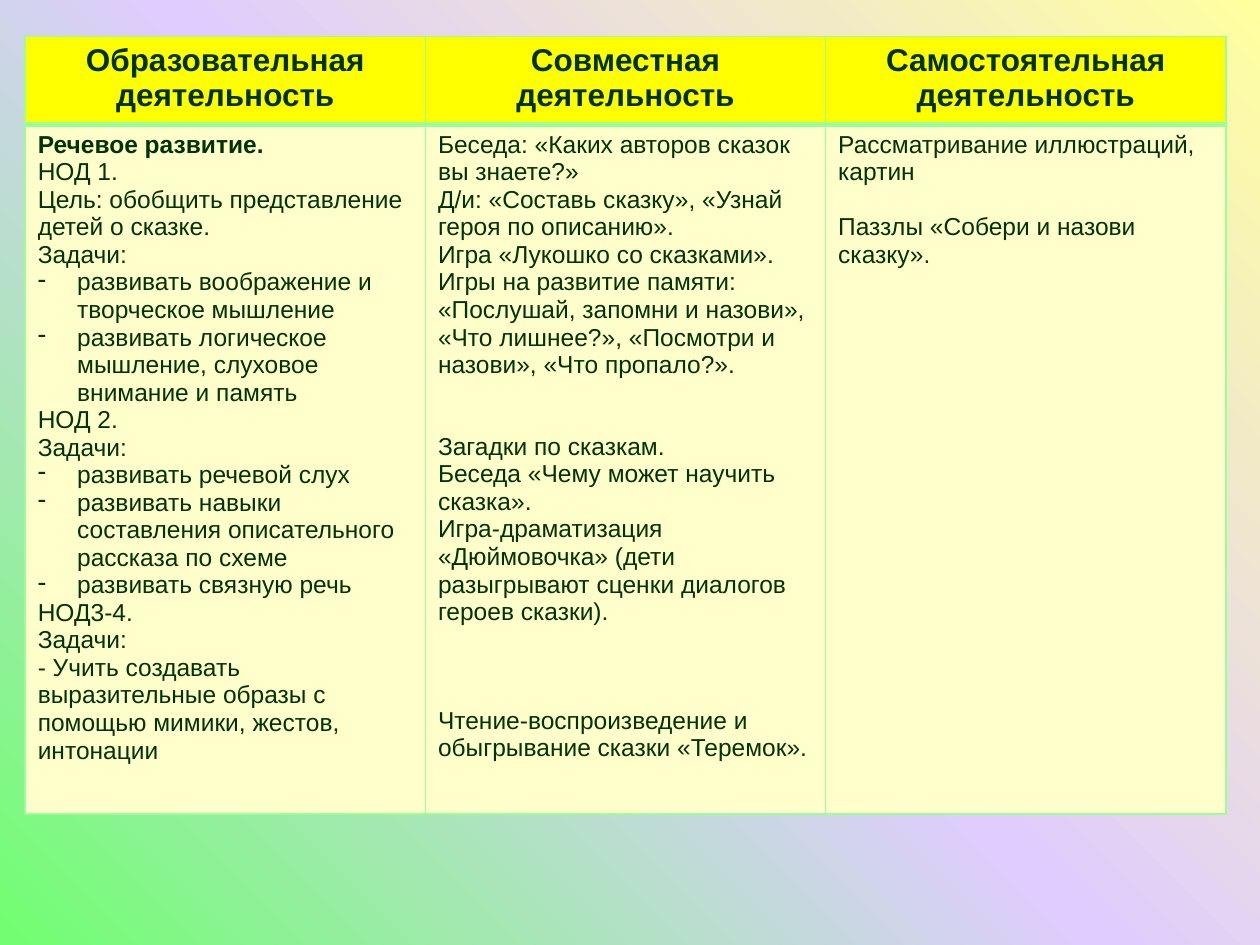
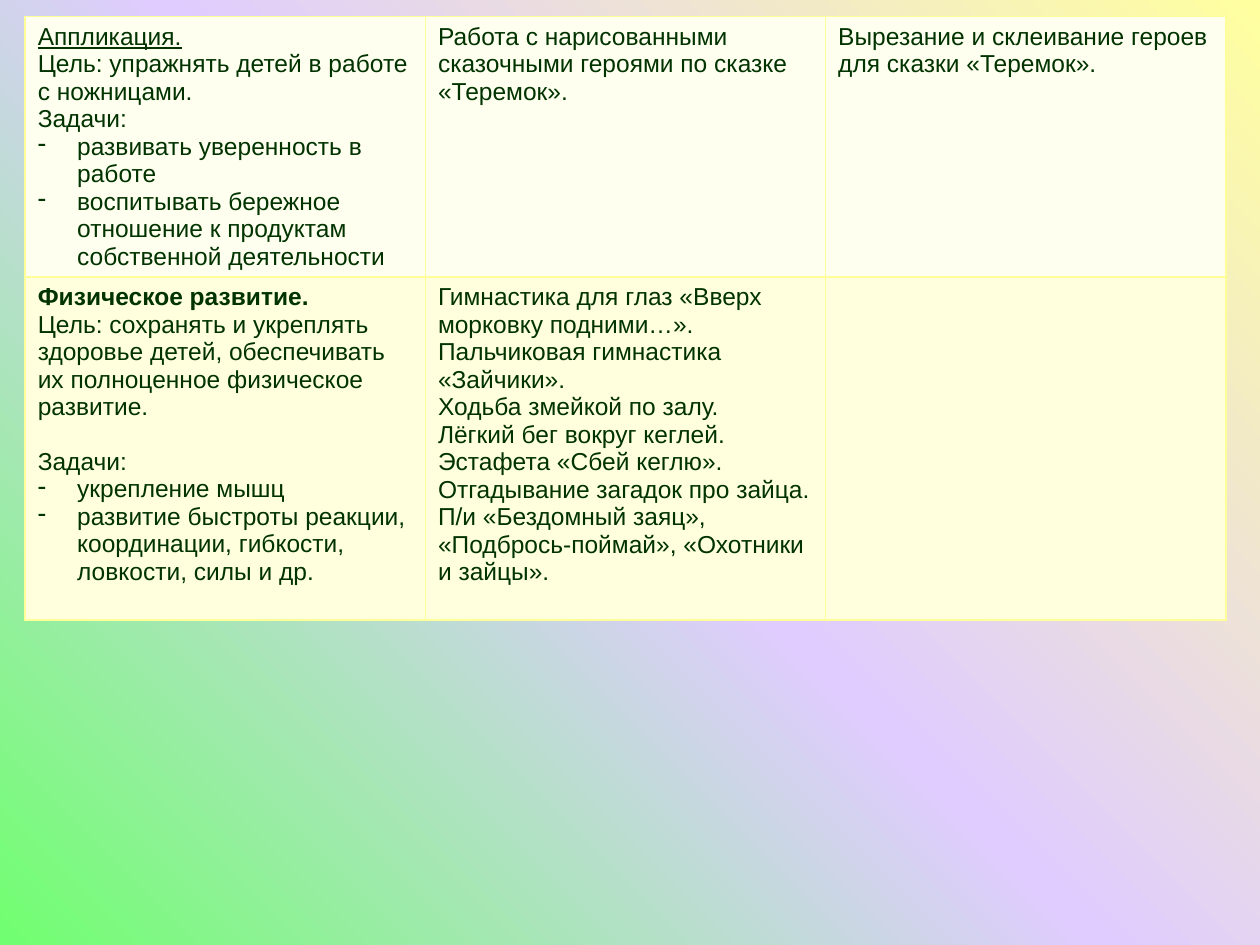
from dataclasses import dataclass

import lxml.etree
import pptx
import pptx.dml.color
import pptx.enum.text
import pptx.oxml
import pptx.oxml.ns
import pptx.slide
import pptx.table
import pptx.util

Pt = pptx.util.Pt


@dataclass(frozen=True)
class Theme:
    font: str = "Arial"
    ink: str = "003300"
    heading_size: float = 18
    body_size: float = 14
    blank_line: float = 15.5
    hanging: float = 22.5
    thin: float = 1
    thick: float = 3
    heading_fill: str = "FFFF00"
    backdrop: tuple[tuple[int, str], ...] = ((0, "FFFFA0"), (50, "E0CCFF"), (100, "70FF70"))
    left: float = 14.4
    column_width: float = 228.7


THEME = Theme()


@dataclass(frozen=True)
class Line:
    text: str
    bold: bool = False
    underline: bool = False
    bullet: bool = False
    blank_lines_before: int = 0


@dataclass(frozen=True)
class Row:
    height: float
    fill: str
    cells: list[list[Line]]
    heading: bool = False


@dataclass(frozen=True)
class Plan:
    top: float
    border: str
    rows: list[Row]


def lines(*texts: str) -> list[Line]:
    return [Line(text) for text in texts]


def goals(*texts: str) -> list[Line]:
    return [Line(text, bullet=True) for text in texts]


PLANS = [
    Plan(20.9, "99FF99", [
        Row(50.4, THEME.heading_fill, [
            [Line(f"{kind} деятельность", bold=True)]
            for kind in ("Образовательная", "Совместная", "Самостоятельная")
        ], heading=True),
        Row(393.8, "FFFFCC", [
            [
                Line("Речевое развитие.", bold=True),
                *lines("НОД 1.", "Цель: обобщить представление детей о сказке.", "Задачи:"),
                *goals("развивать воображение и творческое мышление",
                       "развивать логическое мышление, слуховое внимание и память"),
                *lines("НОД 2.", "Задачи:"),
                *goals("развивать речевой слух",
                       "развивать навыки составления описательного рассказа по схеме",
                       "развивать связную речь"),
                *lines("НОД3-4.", "Задачи:",
                       "- Учить создавать выразительные образы с помощью мимики, жестов, интонации"),
            ],
            [
                *lines("Беседа: «Каких авторов сказок вы знаете?»",
                       "Д/и: «Составь сказку», «Узнай героя по описанию».",
                       "Игра «Лукошко со сказками».",
                       "Игры на развитие памяти: «Послушай, запомни и назови», "
                       "«Что лишнее?», «Посмотри и назови», «Что пропало?»."),
                Line("Загадки по сказкам.", blank_lines_before=2),
                *lines("Беседа «Чему может научить сказка».",
                       "Игра-драматизация «Дюймовочка» (дети разыгрывают сценки "
                       "диалогов героев сказки)."),
                Line("Чтение-воспроизведение и обыгрывание сказки «Теремок».",
                     blank_lines_before=3),
            ],
            [
                Line("Рассматривание иллюстраций, картин"),
                Line("Паззлы «Собери и назови сказку».", blank_lines_before=1),
            ],
        ]),
    ]),
    Plan(9.4, "FFFF99", [
        Row(148, "FFFFEF", [
            [
                Line("Аппликация.", underline=True),
                *lines("Цель: упражнять детей в работе с ножницами.", "Задачи:"),
                *goals("развивать уверенность в работе",
                       "воспитывать бережное отношение к продуктам собственной деятельности"),
            ],
            lines("Работа с нарисованными сказочными героями по сказке «Теремок»."),
            lines("Вырезание и склеивание героев для сказки «Теремок»."),
        ]),
        Row(196, "FFFFDE", [
            [
                Line("Физическое развитие.", bold=True),
                Line("Цель: сохранять и укреплять здоровье детей, обеспечивать "
                     "их полноценное физическое развитие."),
                Line("Задачи:", blank_lines_before=1),
                *goals("укрепление мышц",
                       "развитие быстроты реакции, координации, гибкости, ловкости, силы и др."),
            ],
            lines("Гимнастика для глаз «Вверх морковку подними…».",
                  "Пальчиковая гимнастика «Зайчики».",
                  "Ходьба змейкой по залу.",
                  "Лёгкий бег вокруг кеглей.",
                  "Эстафета «Сбей кеглю».",
                  "Отгадывание загадок про зайца.",
                  "П/и «Бездомный заяц», «Подбрось-поймай», «Охотники и зайцы»."),
            [],
        ]),
    ]),
]


def add_child(parent: lxml.etree._Element, tag: str, **attributes: object) -> lxml.etree._Element:
    values = {name: str(value) for name, value in attributes.items()}
    return lxml.etree.SubElement(parent, pptx.oxml.ns.qn(tag), values)


def paint_backdrop(master: pptx.slide.SlideMaster) -> None:
    """Give every slide a gradient that spreads from the top right corner."""
    master.background.fill.gradient()
    gradient = next(master.element.iter(pptx.oxml.ns.qn("a:gradFill")))
    for child in list(gradient):
        gradient.remove(child)
    stops = add_child(gradient, "a:gsLst")
    for percent, color in THEME.backdrop:
        stop = add_child(stops, "a:gs", pos=percent * 1000)
        add_child(stop, "a:srgbClr", val=color)
    circle = add_child(gradient, "a:path", path="circle")
    add_child(circle, "a:fillToRect", l=100000, b=100000)


def draw_borders(cell: pptx.table._Cell, color: str, top: float, bottom: float) -> None:
    properties = cell._tc.get_or_add_tcPr()
    widths = {"L": THEME.thin, "R": THEME.thin, "T": top, "B": bottom}
    for side, width in widths.items():
        border = add_child(properties, f"a:ln{side}", w=Pt(width))
        add_child(add_child(border, "a:solidFill"), "a:srgbClr", val=color)


def write_cell(cell: pptx.table._Cell, content: list[Line], heading: bool) -> None:
    cell.text_frame.text = "\n".join(line.text for line in content)
    for paragraph, line in zip(cell.text_frame.paragraphs, content):
        if line.bullet:
            properties = paragraph._p.get_or_add_pPr()
            properties.set("marL", str(Pt(THEME.hanging)))
            properties.set("indent", str(-Pt(THEME.hanging)))
            add_child(properties, "a:buChar", char="-")
        if line.blank_lines_before:
            paragraph.space_before = Pt(line.blank_lines_before * THEME.blank_line)
        if heading:
            paragraph.alignment = pptx.enum.text.PP_ALIGN.CENTER
        for run in paragraph.runs:
            run.font.name = THEME.font
            run.font.size = Pt(THEME.heading_size if heading else THEME.body_size)
            run.font.bold = line.bold
            run.font.underline = line.underline
            run.font.color.rgb = pptx.dml.color.RGBColor.from_string(THEME.ink)


def add_plan(slide: pptx.slide.Slide, plan: Plan) -> None:
    column_count = len(plan.rows[0].cells)
    table = slide.shapes.add_table(
        len(plan.rows), column_count, Pt(THEME.left), Pt(plan.top),
        Pt(THEME.column_width * column_count), Pt(sum(row.height for row in plan.rows)),
    ).table
    table.first_row = any(row.heading for row in plan.rows)
    table.horz_banding = False
    for column in table.columns:
        column.width = Pt(THEME.column_width)
    top = THEME.thin
    for row_index, row in enumerate(plan.rows):
        table.rows[row_index].height = Pt(row.height)
        bottom = THEME.thick if row.heading else THEME.thin
        for column_index, content in enumerate(row.cells):
            cell = table.cell(row_index, column_index)
            draw_borders(cell, plan.border, top, bottom)
            cell.fill.solid()
            cell.fill.fore_color.rgb = pptx.dml.color.RGBColor.from_string(row.fill)
            write_cell(cell, content, row.heading)
        top = bottom


def main() -> None:
    presentation = pptx.Presentation()
    presentation.slide_width, presentation.slide_height = Pt(720), Pt(540)
    paint_backdrop(presentation.slide_master)
    blank_layout = presentation.slide_layouts[6]
    for plan in PLANS:
        add_plan(presentation.slides.add_slide(blank_layout), plan)
    presentation.save("out.pptx")


if __name__ == "__main__":
    main()
